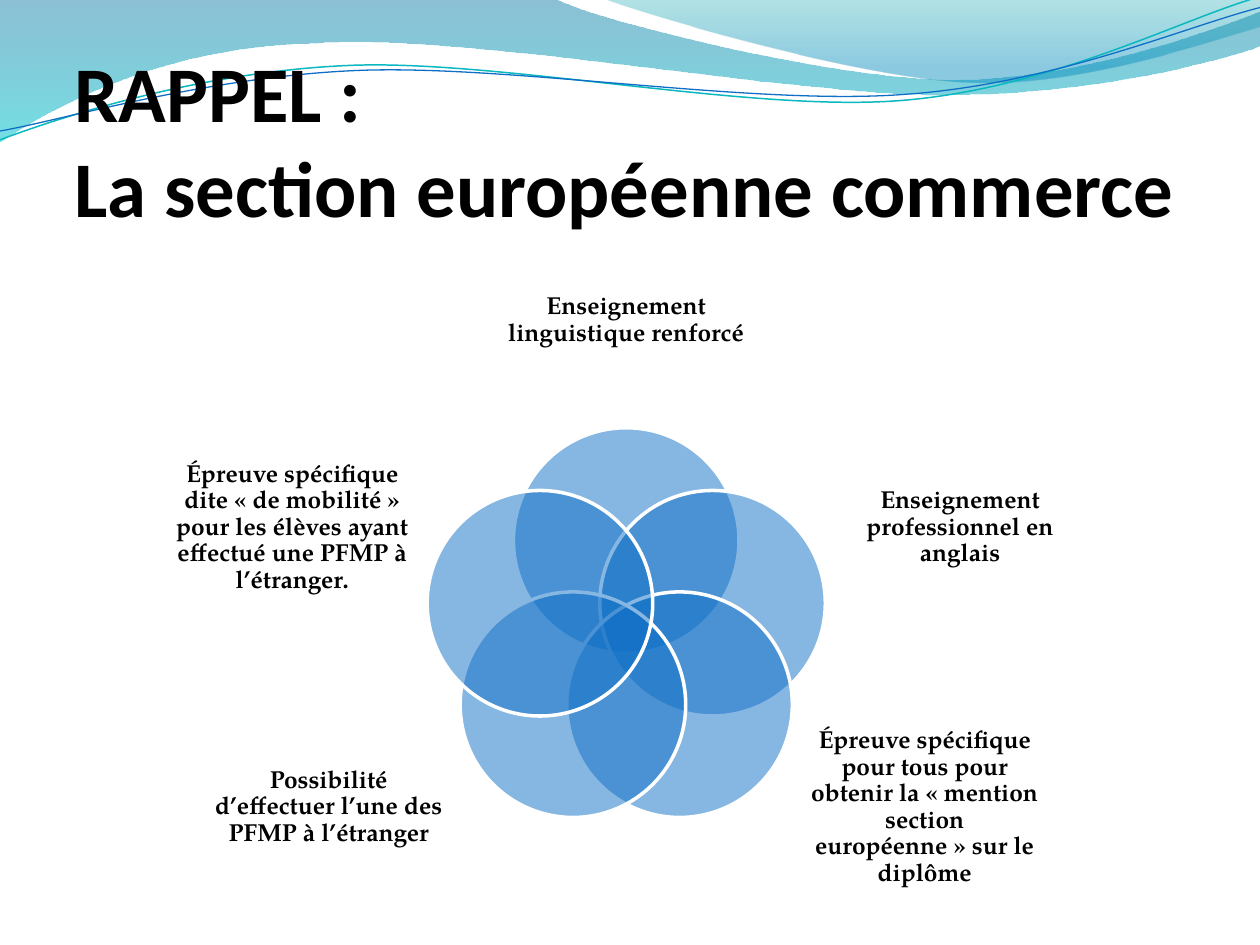
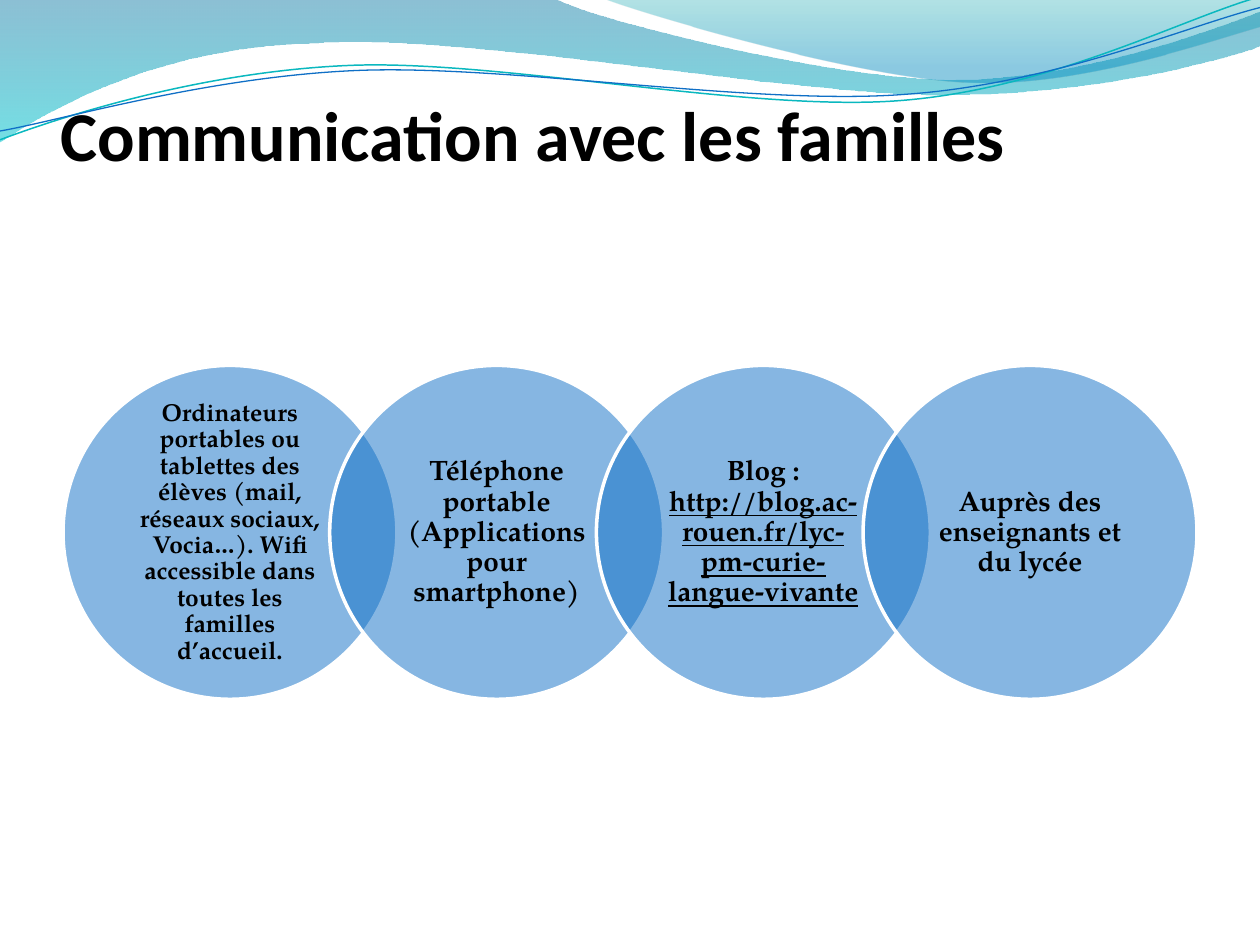
from dataclasses import dataclass
from math import cos, pi, sin

from lxml.etree import SubElement
from pptx import Presentation
from pptx.dml.color import RGBColor
from pptx.enum.shapes import MSO_SHAPE
from pptx.enum.text import MSO_ANCHOR, PP_ALIGN
from pptx.oxml.ns import qn
from pptx.util import Inches, Pt


@dataclass(frozen=True)
class Theme:
    text: str = "000000"
    circle: str = "0F6FC6"
    circle_opacity: int = 50
    outline: str = "FFFFFF"
    outline_width: float = 2
    title_font: str = "Calibri"
    body_font: str = "TeX Gyre Pagella"
    title_size: int = 40
    large_title_size: int = 45
    body_size: int = 16
    small_body_size: int = 14
    line_spacing: float = 0.9


THEME = Theme()

# Outlines: a start point, then straight (x, y) or cubic (x1, y1, x2, y2, x, y) steps.
# Gradient stops: position, colour, opacity in percent.
BANDS = [
    {
        "outline": [
            (0, 0), (4.4, -0.01),
            (4.76, 0.17, 6.64, 0.63, 7.58, 0.63),
            (8.53, 0.63, 9.58, 0.26, 10, 0.09),
            (10.01, 0.36),
            (9.83, 0.44, 8.7, 0.76, 7.46, 0.75),
            (6.22, 0.75, 3.82, 0.28, 2.57, 0.34),
            (1.29, 0.36, 0.46, 0.83, -0.01, 1.13),
        ],
        "stops": [(0, "0074A1", 45), (1, "00C6CF", 55)],
    },
    {
        "outline": [
            (4.79, -0.01),
            (5.09, 0.11, 6.82, 0.62, 7.69, 0.65),
            (8.56, 0.69, 9.61, 0.32, 10, 0.21),
            (10, 0),
        ],
        "stops": [(0, "00A1A9", 30), (0.8, "008BBF", 45)],
    },
]
WAVES = [
    {
        "outline": [
            (0, 1.11),
            (0.48, 0.93, 1.58, 0.57, 2.77, 0.52),
            (3.95, 0.47, 5.93, 0.89, 7.13, 0.8),
            (8.33, 0.71, 9.38, 0.15, 9.98, -0.02),
        ],
        "color": "0AB8BF", "width": 0.85,
    },
    {
        "outline": [
            (0, 1.04),
            (0.47, 0.96, 1.64, 0.61, 2.83, 0.56),
            (4.03, 0.51, 5.97, 0.84, 7.17, 0.75),
            (8.36, 0.67, 9.41, 0.21, 10, 0.06),
        ],
        "color": "0F6FC6", "width": 0.75,
    },
]

SECTION_TITLE = ["RAPPEL :", "La section européenne commerce"]
# Clockwise from the top: text and its box (left, top, width, height).
SECTION_LABELS = [
    ("Enseignement linguistique renforcé", (3.93, 1.94, 2.08, 1.2)),
    ("Enseignement professionnel en anglais", (6.69, 3.53, 1.86, 1.31)),
    ("Épreuve spécifique pour tous pour obtenir la « mention section européenne » sur le diplôme",
     (6.41, 5.75, 1.86, 1.31)),
    ("Possibilité d’effectuer l’une des PFMP à l’étranger", (1.68, 5.75, 1.86, 1.31)),
    ("Épreuve spécifique dite « de mobilité » pour les élèves ayant effectué une PFMP à l’étranger.",
     (1.39, 3.53, 1.86, 1.31)),
]
RING_CENTER = (4.97, 5.01)
RING_RADIUS = 0.72
RING_CIRCLE = 1.79

FAMILY_TITLE = ["Communication avec les familles"]
# Each channel: type size and runs of (text, underlined).
FAMILY_CHANNELS = [
    (THEME.small_body_size,
     [("Ordinateurs portables ou tablettes des élèves (mail, réseaux sociaux, Vocia…). "
       "Wifi accessible dans toutes les familles d’accueil.", False)]),
    (THEME.body_size, [("Téléphone portable (Applications pour smartphone)", False)]),
    (THEME.body_size,
     [("Blog : ", False), ("http://blog.ac-rouen.fr/lyc-pm-curie-langue-vivante", True)]),
    (THEME.body_size, [("Auprès des enseignants et du lycée", False)]),
]
CHAIN_LEFT, CHAIN_TOP, CHAIN_WIDTH = 0.5, 2.9, 9
CHAIN_CIRCLE = 2.65
CHAIN_STEP = (CHAIN_WIDTH - CHAIN_CIRCLE) / (len(FAMILY_CHANNELS) - 1)
CHAIN_TEXT = 1.87


def color(value):
    return RGBColor.from_string(value)


def bind_quotes(text):
    """Keep French quotation marks on the line of the words they enclose."""
    no_break_space = chr(160)
    return text.replace("« ", "«" + no_break_space).replace(" »", no_break_space + "»")


def set_opacity(shape, percents):
    """Give each fill colour its opacity; call before the line gets a colour."""
    for node, percent in zip(shape._element.spPr.iter(qn("a:srgbClr")), percents):
        SubElement(node, qn("a:alpha")).set("val", str(percent * 1000))


def add_outline(slide, outline, closed):
    """Build the outline from its end points, then bend the cubic steps."""
    corners = [tuple(map(Inches, step[-2:])) for step in outline]
    builder = slide.shapes.build_freeform(*corners[0], scale=1.0)
    builder.add_line_segments(corners[1:], close=closed)
    shape = builder.convert_to_shape()
    shape.shadow.inherit = False
    segments = list(shape._element.spPr.iter(qn("a:lnTo")))
    for segment, step in zip(segments, outline[1:]):
        if len(step) == 2:
            continue
        curve = segment.makeelement(qn("a:cubicBezTo"))
        for x, y in zip(step[::2], step[1::2]):
            point = SubElement(curve, qn("a:pt"))
            point.set("x", str(Inches(x) - shape.left))
            point.set("y", str(Inches(y) - shape.top))
        segment.getparent().replace(segment, curve)
    return shape


def add_header(slide):
    for band in BANDS:
        shape = add_outline(slide, band["outline"], True)
        shape.fill.gradient()
        shape.fill.gradient_angle = 270
        for stop, (position, value, _) in zip(shape.fill.gradient_stops, band["stops"]):
            stop.position = position
            stop.color.rgb = color(value)
        set_opacity(shape, [opacity for _, _, opacity in band["stops"]])
        shape.line.fill.background()
    for wave in WAVES:
        shape = add_outline(slide, wave["outline"], False)
        shape.fill.background()
        shape.line.color.rgb = color(wave["color"])
        shape.line.width = Pt(wave["width"])


def add_text_box(slide, box, anchor, margins=(0, 0, 0, 0)):
    frame = slide.shapes.add_textbox(*map(Inches, box)).text_frame
    frame.word_wrap = True
    frame.vertical_anchor = anchor
    (frame.margin_left, frame.margin_top,
     frame.margin_right, frame.margin_bottom) = map(Inches, margins)
    return frame


def add_run(paragraph, text, font, size, underlined=False):
    run = paragraph.add_run()
    run.text = bind_quotes(text)
    run.font.name = font
    run.font.size = Pt(size)
    run.font.bold = True
    run.font.color.rgb = color(THEME.text)
    if underlined:
        run.font.underline = True


def add_title(slide, lines, box, size):
    frame = add_text_box(slide, box, MSO_ANCHOR.BOTTOM, (0, 0.05, 0, 0))
    paragraph = frame.paragraphs[0]
    for index, line in enumerate(lines):
        if index:
            paragraph.add_line_break()
        add_run(paragraph, line, THEME.title_font, size)


def add_label(slide, runs, box, size, margins=(0, 0, 0, 0)):
    paragraph = add_text_box(slide, box, MSO_ANCHOR.MIDDLE, margins).paragraphs[0]
    paragraph.alignment = PP_ALIGN.CENTER
    paragraph.line_spacing = THEME.line_spacing
    for text, underlined in runs:
        add_run(paragraph, text, THEME.body_font, size, underlined)


def add_circle(slide, center_x, center_y, diameter):
    shape = slide.shapes.add_shape(
        MSO_SHAPE.OVAL, Inches(center_x - diameter / 2), Inches(center_y - diameter / 2),
        Inches(diameter), Inches(diameter))
    shape.shadow.inherit = False
    shape.fill.solid()
    shape.fill.fore_color.rgb = color(THEME.circle)
    set_opacity(shape, [THEME.circle_opacity])
    shape.line.color.rgb = color(THEME.outline)
    shape.line.width = Pt(THEME.outline_width)


def add_slide(presentation):
    slide = presentation.slides.add_slide(presentation.slide_layouts[6])
    add_header(slide)
    return slide


def build_section_slide(presentation):
    slide = add_slide(presentation)
    add_title(slide, SECTION_TITLE, (0.59, 0.25, 9, 1.6), THEME.large_title_size)
    for index, (text, box) in enumerate(SECTION_LABELS):
        angle = 2 * pi * index / len(SECTION_LABELS)
        add_circle(slide, RING_CENTER[0] + RING_RADIUS * sin(angle),
                   RING_CENTER[1] - RING_RADIUS * cos(angle), RING_CIRCLE)
        add_label(slide, [(text, False)], box, THEME.small_body_size)


def build_family_slide(presentation):
    slide = add_slide(presentation)
    add_title(slide, FAMILY_TITLE, (0.48, 0.14, 9, 1.25), THEME.title_size)
    center_y = CHAIN_TOP + CHAIN_CIRCLE / 2
    for index, (size, runs) in enumerate(FAMILY_CHANNELS):
        center_x = CHAIN_LEFT + CHAIN_CIRCLE / 2 + index * CHAIN_STEP
        add_circle(slide, center_x, center_y, CHAIN_CIRCLE)
        box = (center_x - CHAIN_TEXT / 2, center_y - CHAIN_TEXT / 2, CHAIN_TEXT, CHAIN_TEXT)
        add_label(slide, runs, box, size, (0.15, 0.02, 0.15, 0.02))


def main():
    presentation = Presentation()
    presentation.slide_width = Inches(10)
    presentation.slide_height = Inches(7.5)
    build_section_slide(presentation)
    build_family_slide(presentation)
    presentation.save("out.pptx")


if __name__ == "__main__":
    main()
